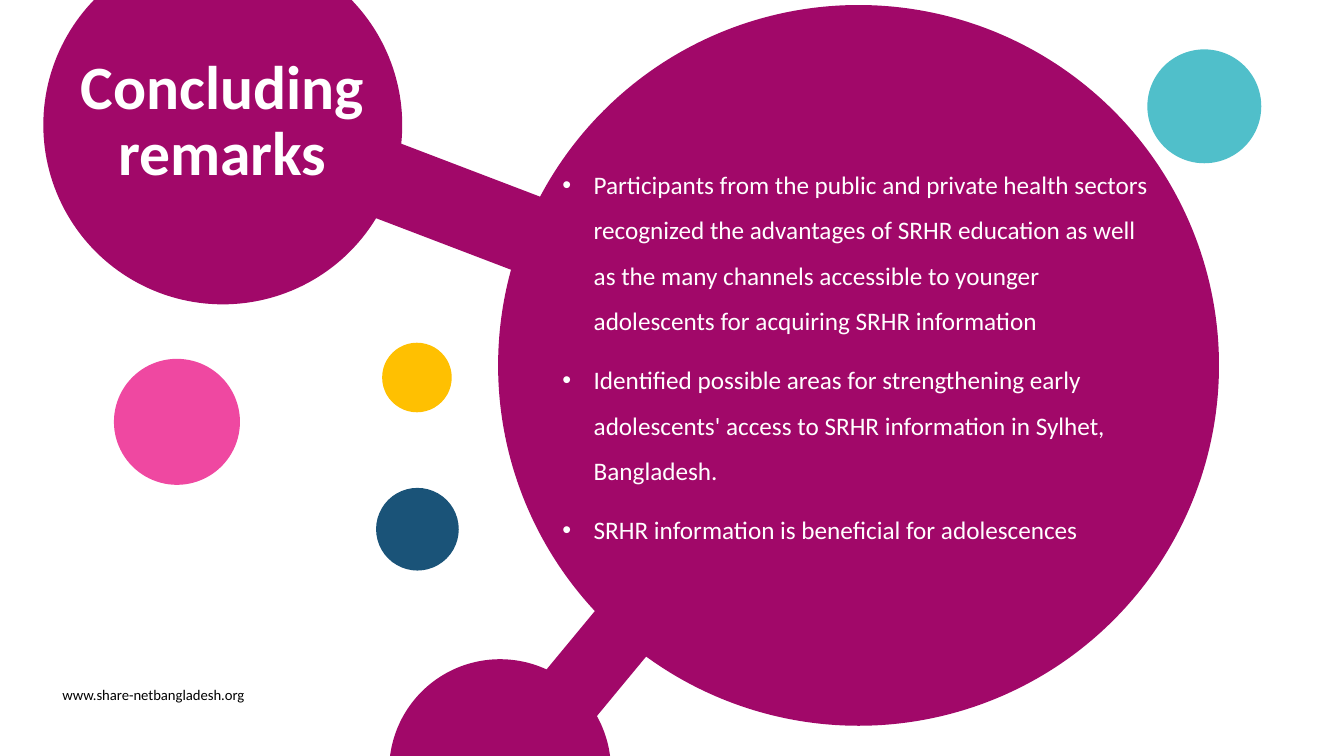
from lxml.etree import SubElement
from pptx import Presentation
from pptx.dml.color import RGBColor
from pptx.enum.shapes import MSO_SHAPE
from pptx.enum.text import MSO_ANCHOR, PP_ALIGN
from pptx.oxml.ns import qn
from pptx.util import Inches, Pt

PLUM, WHITE, BLACK = "A10869", "FFFFFF", "000000"


def color(value):
    return RGBColor.from_string(value)


class BubbleSlide:
    """Draws circles, bars and text on one slide in a shared style."""

    font = "Calibri"

    def __init__(self, slide):
        self.slide = slide

    def solid(self, kind, left, top, width, height, fill, rotation=0):
        shape = self.slide.shapes.add_shape(
            kind, Inches(left), Inches(top), Inches(width), Inches(height))
        shape.shadow.inherit = False
        shape.fill.solid()
        shape.fill.fore_color.rgb = color(fill)
        shape.line.fill.background()
        shape.rotation = rotation

    def circle(self, left, top, diameter, fill):
        self.solid(MSO_SHAPE.OVAL, left, top, diameter, diameter, fill)

    def bar(self, left, top, width, height, rotation):
        self.solid(MSO_SHAPE.RECTANGLE, left, top, width, height, PLUM, rotation)

    def text(self, left, top, width, height, paragraphs, size, fill=WHITE,
             bold=False, align=PP_ALIGN.LEFT, anchor=MSO_ANCHOR.TOP,
             spacing=1.0, inset=0.1, bullets=False):
        frame = self.slide.shapes.add_textbox(
            Inches(left), Inches(top), Inches(width), Inches(height)).text_frame
        frame.word_wrap = True
        frame.vertical_anchor = anchor
        frame.margin_left = Inches(inset)
        for index, wording in enumerate(paragraphs):
            paragraph = frame.add_paragraph() if index else frame.paragraphs[0]
            paragraph.text = wording
            paragraph.alignment = align
            paragraph.line_spacing = spacing
            if index:
                paragraph.space_before = Pt(10)
            if bullets:
                self.bullet(paragraph)
            paragraph.font.name = self.font
            paragraph.font.size = Pt(size)
            paragraph.font.bold = bold
            paragraph.font.color.rgb = color(fill)

    def bullet(self, paragraph):
        properties = paragraph._p.get_or_add_pPr()
        indent = Inches(0.31)
        properties.set("marL", str(indent))
        properties.set("indent", str(-indent))
        bullet_color = SubElement(properties, qn("a:buClr"))
        SubElement(bullet_color, qn("a:srgbClr"), val=WHITE)
        SubElement(properties, qn("a:buFont"), typeface="Arial")
        SubElement(properties, qn("a:buChar"), char="•")


def main():
    presentation = Presentation()
    presentation.slide_width = Inches(13.33)
    presentation.slide_height = Inches(7.5)
    page = BubbleSlide(presentation.slides.add_slide(presentation.slide_layouts[6]))

    for left, top, diameter, fill in [
        (4.94, 0.05, 7.15, PLUM),
        (3.86, 6.54, 2.2, PLUM),
        (0.43, -0.54, 3.56, PLUM),
        (3.79, 3.4, 0.69, "FFC001"),
        (11.38, 0.49, 1.13, "50BFCA"),
        (1.13, 3.56, 1.25, "EF48A1"),
        (3.73, 4.84, 0.82, "1A5378"),
    ]:
        page.circle(left, top, diameter, fill)
    page.bar(5.49, 6.25, 0.83, 0.68, 309.6)
    page.bar(3.26, 1.6, 2.21, 0.78, 20.9)

    page.text(0.52, 6.75, 2.05, 0.28, ["www.share-netbangladesh.org"], 10.5, BLACK)
    page.text(0.78, 0.18, 2.95, 2.07, ["Concluding remarks"], 44, bold=True,
              align=PP_ALIGN.CENTER, anchor=MSO_ANCHOR.MIDDLE, spacing=0.9, inset=0)
    page.text(5.48, 1.48, 6.12, 4.18, [
        "Participants from the public and private health sectors recognized the "
        "advantages of SRHR education as well as the many channels accessible to "
        "younger adolescents for acquiring SRHR information",
        "Identified possible areas for strengthening early adolescents' access to "
        "SRHR information in Sylhet, Bangladesh.",
        "SRHR information is beneficial for adolescences",
    ], 18, spacing=1.5, bullets=True)

    presentation.save("out.pptx")


if __name__ == "__main__":
    main()
